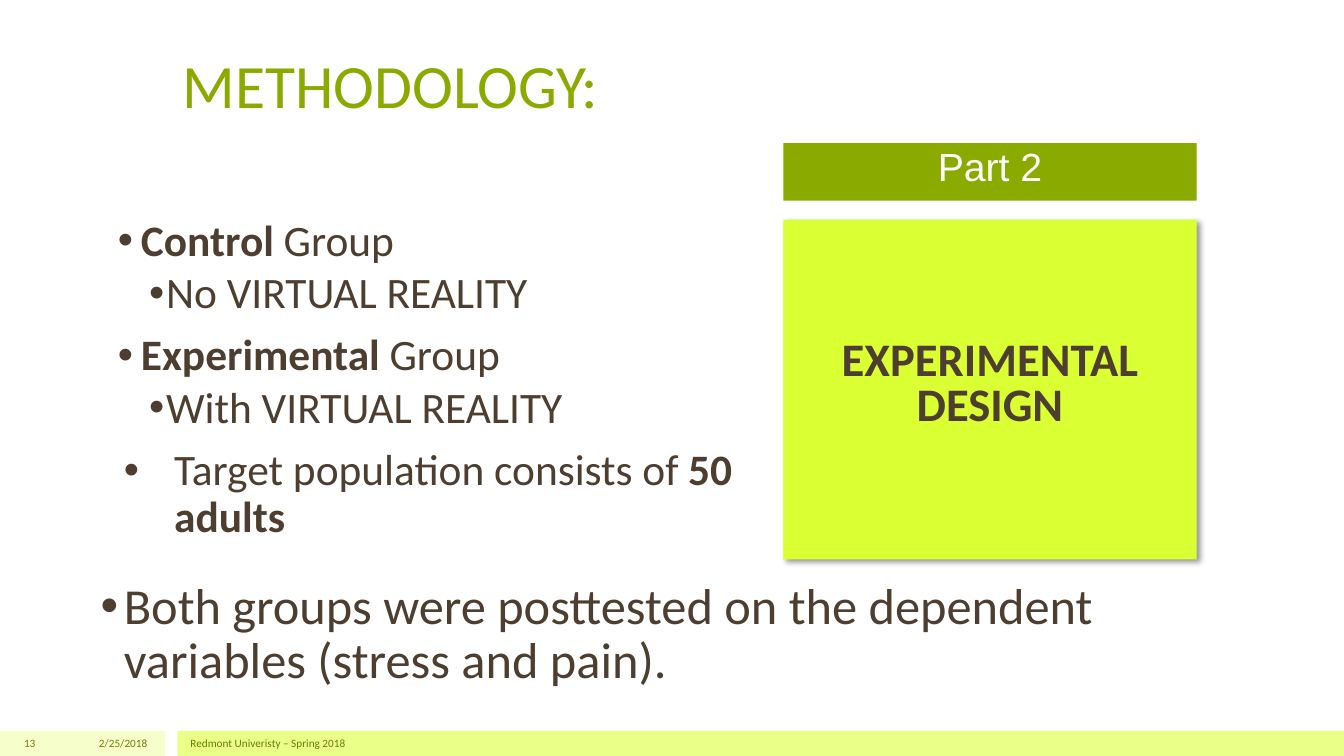
from lxml import etree
from pptx import Presentation
from pptx.dml.color import RGBColor
from pptx.enum.shapes import MSO_SHAPE
from pptx.enum.text import MSO_ANCHOR, MSO_AUTO_SIZE, PP_ALIGN
from pptx.oxml import parse_xml
from pptx.oxml.ns import qn
from pptx.util import Inches, Pt

WHITE = RGBColor(0xFF, 0xFF, 0xFF)
BROWN = RGBColor(0x4D, 0x3E, 0x2F)
GREEN = RGBColor(0x8B, 0xAA, 0x00)
DARK_GREEN = RGBColor(0x68, 0x80, 0x00)
LIME = RGBColor(0xDA, 0xFF, 0x33)
PALE_LIME = RGBColor(0xE9, 0xFF, 0x88)
PALEST_LIME = RGBColor(0xF6, 0xFF, 0xCC)

SHADOW = (
    '<a:effectLst xmlns:a="http://schemas.openxmlformats.org/drawingml/2006/main">'
    '<a:outerShdw blurRad="50800" dist="38100" dir="2700000" algn="tl" rotWithShape="0">'
    '<a:srgbClr val="000000"><a:alpha val="40000"/></a:srgbClr>'
    '</a:outerShdw></a:effectLst>'
)


def add_rectangle(slide, box, color, shadow=False):
    shape = slide.shapes.add_shape(MSO_SHAPE.RECTANGLE, *map(Inches, box))
    shape.fill.solid()
    shape.fill.fore_color.rgb = color
    shape.line.fill.background()
    if shadow:
        shape._element.spPr.append(parse_xml(SHADOW))
    else:
        shape.shadow.inherit = False


def add_bullet(paragraph, margin, hanging):
    properties = paragraph._p.get_or_add_pPr()
    properties.set("marL", str(Inches(margin)))
    properties.set("indent", str(-Inches(hanging)))
    etree.SubElement(properties, qn("a:buFont")).set("typeface", "Arial")
    etree.SubElement(properties, qn("a:buChar")).set("char", "•")


def write_paragraph(paragraph, runs, size, color, font="Calibri", align=PP_ALIGN.LEFT,
                    spacing=1.0, before=0, bullet=None):
    """Write (text, bold) runs; bullet is a (margin, hanging) pair in inches."""
    paragraph.alignment = align
    paragraph.line_spacing = spacing
    paragraph.space_before = Pt(before)
    if bullet:
        add_bullet(paragraph, *bullet)
    for text, bold in runs:
        run = paragraph.add_run()
        run.text = text
        run.font.name = font
        run.font.size = Pt(size)
        run.font.bold = bold
        run.font.color.rgb = color


def add_text_box(slide, box, anchor=MSO_ANCHOR.TOP):
    frame = slide.shapes.add_textbox(*map(Inches, box)).text_frame
    frame.word_wrap = True
    frame.vertical_anchor = anchor
    return frame


def add_text(slide, box, text, size, color, bold=False, anchor=MSO_ANCHOR.TOP, **options):
    frame = add_text_box(slide, box, anchor)
    write_paragraph(frame.paragraphs[0], [(text, bold)], size, color, **options)


def add_title(slide, box, text):
    title = slide.shapes.title
    title.left, title.top, title.width, title.height = map(Inches, box)
    frame = title.text_frame
    frame.auto_size = MSO_AUTO_SIZE.NONE
    frame.word_wrap = True
    frame.vertical_anchor = MSO_ANCHOR.BOTTOM
    write_paragraph(frame.paragraphs[0], [(text, False)], 44, GREEN)


def add_groups(slide, box):
    group, detail, population = (0.23, 0.23), (0.48, 0.17), (0.56, 0.5)
    items = [
        ([("Control", True), (" Group", False)], 0, group),
        ([("No VIRTUAL REALITY", False)], 1, detail),
        ([("Experimental", True), (" Group", False)], 0, group),
        ([("With VIRTUAL REALITY", False)], 1, detail),
        ([("Target population consists of ", False), ("50 adults", True)], 0, population),
    ]
    frame = add_text_box(slide, box)
    for index, (runs, level, bullet) in enumerate(items):
        paragraph = frame.add_paragraph() if index else frame.paragraphs[0]
        paragraph.level = level
        write_paragraph(paragraph, runs, 31, BROWN, spacing=0.9,
                        before=4 if level else 11, bullet=bullet)


def add_design_card(slide, box):
    left, top, width, height = box
    header_height, gap = 0.57, 0.19
    body_top = top + header_height + gap
    # Lime body with its label
    add_rectangle(slide, (left, body_top, width, height - header_height - gap), LIME, shadow=True)
    add_text(slide, (left, body_top + 1.15, width, 0.99), "EXPERIMENTAL DESIGN", 33.3, BROWN,
             bold=True, align=PP_ALIGN.CENTER, spacing=0.8, before=12)
    # Green header
    add_rectangle(slide, (left, top, width, header_height), GREEN)
    add_text(slide, (left, top, width, 0.55), "Part 2", 28, WHITE, font="Arial",
             align=PP_ALIGN.CENTER, spacing=0.9, before=11)


def add_footer(slide, box):
    left, top, width, height = box
    split, gap = 1.64, 0.12
    add_rectangle(slide, (left, top, split, height), PALEST_LIME)
    add_rectangle(slide, (left + split + gap, top, width - split - gap, height), PALE_LIME)
    for offset, text_width, text, align in (
        (0, 0.45, "13", PP_ALIGN.RIGHT),
        (0.47, 1.09, "2/25/2018", PP_ALIGN.RIGHT),
        (1.79, 10, "Redmont Univeristy – Spring 2018", PP_ALIGN.LEFT),
    ):
        add_text(slide, (left + offset, top, text_width, height), text, 8, DARK_GREEN,
                 anchor=MSO_ANCHOR.MIDDLE, align=align)


def main():
    presentation = Presentation()
    presentation.slide_width = Inches(13.33)
    presentation.slide_height = Inches(7.5)
    slide = presentation.slides.add_slide(presentation.slide_layouts.get_by_name("Title Only"))

    add_footer(slide, (0, 7.25, 13.33, 0.25))
    add_title(slide, (1.71, 0.47, 10.25, 0.78), "METHODOLOGY:")
    add_groups(slide, (1.07, 2.12, 6.7, 3.44))
    add_design_card(slide, (7.77, 1.42, 4.1, 4.13))
    # Closing statement
    add_text(slide, (0.9, 5.71, 11.68, 1.19),
             "Both groups were posttested on the dependent variables (stress and pain).",
             36, BROWN, spacing=0.9, before=11, bullet=(0.23, 0.23))

    presentation.save("out.pptx")


if __name__ == "__main__":
    main()
